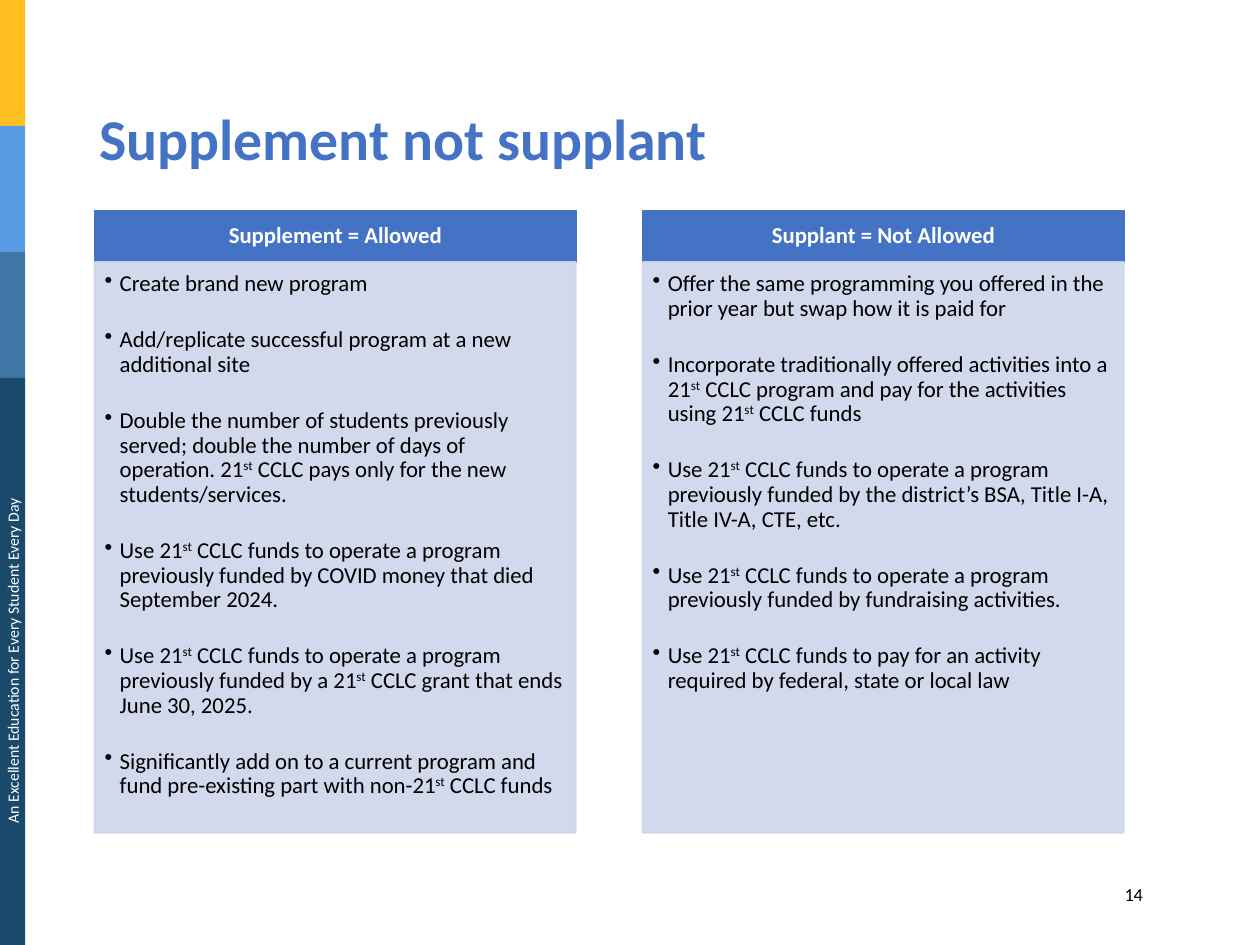
from dataclasses import dataclass
from lxml import etree
from pptx import Presentation, util as u
from pptx.dml.color import RGBColor
from pptx.enum import shapes, text
from pptx.oxml import ns

Inches, Pt = u.Inches, u.Pt


@dataclass(frozen=True)
class Theme:
    font: str = "Calibri"
    blue: str = "4472C4"
    panel: str = "CFD5EA"
    white: str = "FFFFFF"
    black: str = "000000"
    stripes: tuple = ("FFBF20", "589CE3", "3F78A7", "194A6B")
    title_size: float = 33
    body_size: float = 13
    number_size: float = 10.5
    motto_size: float = 9


theme = Theme()


def write(paragraph, words, size, color, **extra):
    run = paragraph.add_run()
    run.text = words
    run.font.color.rgb = RGBColor.from_string(color)
    for key, value in {"name": theme.font, "size": Pt(size), **extra}.items():
        setattr(run.font, key, value)
    return run


def block(left, top, width, height, color, alpha=None, outlined=False):
    rect = slide.shapes.add_shape(
        shapes.MSO_SHAPE.RECTANGLE, Inches(left), Inches(top), Inches(width), Inches(height))
    rect.shadow.inherit = False
    rect.fill.solid()
    rect.fill.fore_color.rgb = RGBColor.from_string(color)
    if outlined:
        rect.line.color.rgb = RGBColor.from_string(color)
        rect.line.width = Pt(1)
    else:
        rect.line.fill.background()
    if alpha:
        for tint in rect.fill._xPr.iter(ns.qn("a:srgbClr")):
            etree.SubElement(tint, ns.qn("a:alpha"), val=str(alpha * 1000))
    return rect


columns = [
    ("Supplement = Allowed", [
        "Create brand new program",
        "Add/replicate successful program at a new additional site",
        "Double the number of students previously served; double the number of days of "
        "operation. 21st CCLC pays only for the new students/services.",
        "Use 21st CCLC funds to operate a program previously funded by COVID money "
        "that died September 2024.",
        "Use 21st CCLC funds to operate a program previously funded by a 21st CCLC "
        "grant that ends June 30, 2025.",
        "Significantly add on to a current program and fund pre-existing part with "
        "non-21st CCLC funds",
    ]),
    ("Supplant = Not Allowed", [
        "Offer the same programming you offered in the prior year but swap how it is paid for",
        "Incorporate traditionally offered activities into a 21st CCLC program and pay "
        "for the activities using 21st CCLC funds",
        "Use 21st CCLC funds to operate a program previously funded by the district’s "
        "BSA, Title I-A, Title IV-A, CTE, etc.",
        "Use 21st CCLC funds to operate a program previously funded by fundraising activities.",
        "Use 21st CCLC funds to pay for an activity required by federal, state or local law",
    ]),
]

prs = Presentation()
prs.slide_width, prs.slide_height = Inches(10), Inches(7.5)
slide = prs.slides.add_slide(prs.slide_layouts[5])

for row, (color, height) in enumerate(zip(theme.stripes, (1, 1, 1, 4.5))):
    block(0, row, 0.2, height, color)

labels = [
    ("An Excellent Education for Every Student Every Day", (-2.15, 5.12, 4.5, 0.25), -90,
     text.PP_ALIGN.CENTER, theme.motto_size, theme.white),
    ("14", (8.53, 6.96, 0.64, 0.28), 0,
     text.PP_ALIGN.RIGHT, theme.number_size, theme.black),
]
for words, place, rotation, alignment, size, color in labels:
    label = slide.shapes.add_textbox(*map(Inches, place))
    label.rotation = rotation
    label.text_frame.word_wrap = True
    line = label.text_frame.paragraphs[0]
    line.alignment = alignment
    write(line, words, size, color)

title = slide.shapes.title
title_place = {"left": 0.69, "top": 0.4, "width": 8.62, "height": 1.45}
for key, value in title_place.items():
    setattr(title, key, Inches(value))
title_format = {"vertical_anchor": text.MSO_ANCHOR.MIDDLE, "word_wrap": True,
                "auto_size": text.MSO_AUTO_SIZE.NONE}
for key, value in title_format.items():
    setattr(title.text_frame, key, value)
heading = title.text_frame.paragraphs[0]
heading.alignment = text.PP_ALIGN.LEFT
heading.line_spacing = 0.9
write(heading, "Supplement not supplant", theme.title_size, theme.blue, bold=True)

header_format = {"vertical_anchor": text.MSO_ANCHOR.MIDDLE, "word_wrap": True,
                 "margin_top": Inches(0.06), "margin_bottom": Inches(0.06)}
panel_format = {"vertical_anchor": text.MSO_ANCHOR.TOP, "word_wrap": True,
                "margin_left": Inches(0.08), "margin_top": Inches(0.08),
                "margin_right": Inches(0.1), "margin_bottom": Inches(0.11)}
item_format = {"alignment": text.PP_ALIGN.LEFT, "line_spacing": 0.9, "space_after": Pt(18)}

for index, (header_words, items) in enumerate(columns):
    left = 0.75 + index * 4.35
    header = block(left, 1.67, 3.82, 0.41, theme.blue, outlined=True).text_frame
    for key, value in header_format.items():
        setattr(header, key, value)
    line = header.paragraphs[0]
    line.alignment = text.PP_ALIGN.CENTER
    line.line_spacing = 0.9
    write(line, header_words, theme.body_size, theme.white, bold=True)

    panel = block(left, 2.08, 3.82, 4.53, theme.panel, alpha=90, outlined=True).text_frame
    for key, value in panel_format.items():
        setattr(panel, key, value)
    for number, item in enumerate(items):
        bullet = panel.add_paragraph() if number else panel.paragraphs[0]
        properties = bullet._p.get_or_add_pPr()
        properties.set("marL", str(Inches(0.12)))
        properties.set("indent", str(-Inches(0.12)))
        etree.SubElement(properties, ns.qn("a:buChar"), char="•")
        for key, value in item_format.items():
            setattr(bullet, key, value)
        *before, last = item.split("21st")
        for piece in before:
            write(bullet, piece + "21", theme.body_size, theme.black)
            ordinal = write(bullet, "st", theme.body_size, theme.black)
            ordinal._r.get_or_add_rPr().set("baseline", "30000")
        write(bullet, last, theme.body_size, theme.black)

prs.save("out.pptx")
